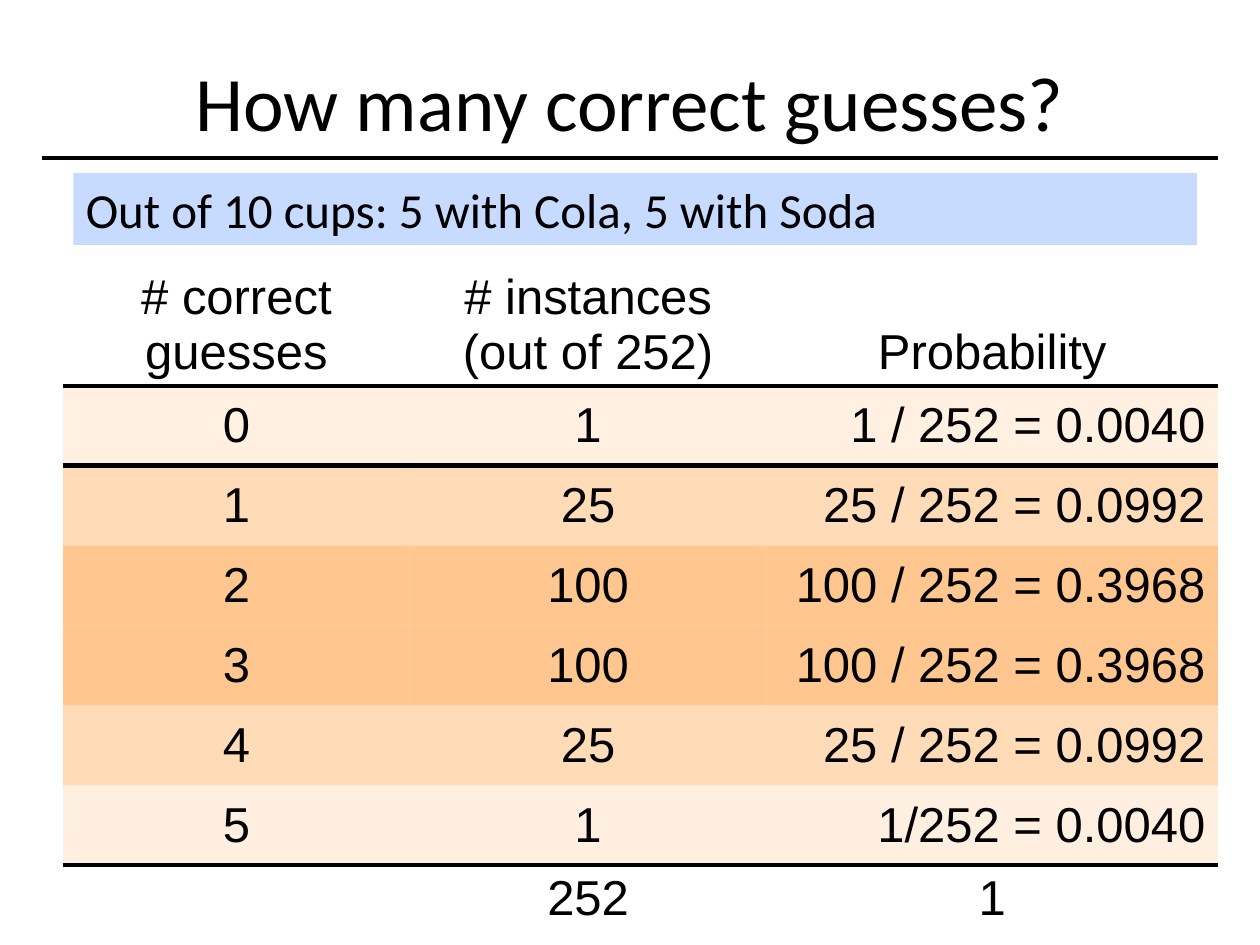
from pptx import Presentation
from pptx.dml.color import RGBColor
from pptx.enum.shapes import MSO_CONNECTOR, MSO_SHAPE
from pptx.enum.text import MSO_ANCHOR, PP_ALIGN
from pptx.oxml.ns import qn
from pptx.util import Cm, Pt
from lxml import etree

STRAIGHT = MSO_CONNECTOR.STRAIGHT
RECTANGLE = MSO_SHAPE.RECTANGLE
LEFT, CENTER, RIGHT = PP_ALIGN.LEFT, PP_ALIGN.CENTER, PP_ALIGN.RIGHT
MIDDLE, BOTTOM = MSO_ANCHOR.MIDDLE, MSO_ANCHOR.BOTTOM
TITLE_ONLY = 5

BLACK, BLUE, ORANGE = "000000", "6699FF", "FF9933"
PLAIN_TABLE_STYLE = "{2D5ABB26-0587-4C30-8999-92F81FD0307C}"

HEADER = ["# correct guesses", "# instances (out of 252)", "Probability"]
# Each row: cell texts and the opacity of its orange fill in percent
BODY = [
    (["0", "1", "1 / 252 = 0.0040"], 14),
    (["1", "25", "25 / 252 = 0.0992"], 35),
    (["2", "100", "100 / 252 = 0.3968"], 55),
    (["3", "100", "100 / 252 = 0.3968"], 55),
    (["4", "25", "25 / 252 = 0.0992"], 35),
    (["5", "1", "1/252 = 0.0040"], 15),
]
TOTALS = ["", "252", "1"]
COLUMN_WIDTHS = [6.99, 7.19, 9.1]
HEADER_HEIGHT, ROW_HEIGHT = 2.5, 1.61


def rgb(color):
    return RGBColor.from_string(color)


def set_fill(fill, color, opacity):
    fill.solid()
    fill.fore_color.rgb = rgb(color)
    # python-pptx has no transparency setting
    color_element = fill._xPr.find(qn("a:solidFill"))[0]
    etree.SubElement(color_element, qn("a:alpha"), val=str(opacity * 1000))


def format_text(text_frame, font_name, size, alignment):
    for paragraph in text_frame.paragraphs:
        paragraph.alignment = alignment
        for run in paragraph.runs:
            run.font.name = font_name
            run.font.size = Pt(size)
            run.font.color.rgb = rgb(BLACK)


def add_border(cell, side, width):
    """Side is the border's tag: lnT or lnB; borders precede the fill."""
    line = etree.Element(qn(f"a:{side}"), w=str(Pt(width)))
    fill = etree.SubElement(line, qn("a:solidFill"))
    etree.SubElement(fill, qn("a:srgbClr"), val=BLACK)
    cell._tc.get_or_add_tcPr().insert(0, line)


def add_title(slide, left, top, width, height):
    title = slide.shapes.title
    title.left, title.top = Cm(left), Cm(top)
    title.width, title.height = Cm(width), Cm(height)
    title.text_frame.text = "How many correct guesses?"
    title.text_frame.vertical_anchor = MIDDLE
    format_text(title.text_frame, "Calibri", 44, CENTER)


def add_rule(slide, left, top, width):
    rule = slide.shapes.add_connector(
        STRAIGHT, Cm(left), Cm(top), Cm(left + width), Cm(top))
    rule.line.color.rgb = rgb(BLACK)
    rule.line.width = Pt(2)
    etree.SubElement(rule._element.spPr, qn("a:effectLst"))


def add_banner(slide, left, top, width, height):
    banner = slide.shapes.add_shape(
        RECTANGLE, Cm(left), Cm(top), Cm(width), Cm(height))
    banner.shadow.inherit = False
    banner.line.fill.background()
    set_fill(banner.fill, BLUE, 36)
    banner.text_frame.word_wrap = True
    banner.text_frame.text = "Out of 10 cups: 5 with Cola, 5 with Soda"
    format_text(banner.text_frame, "Calibri", 28, LEFT)


def add_probability_table(slide, left, top):
    rows = [HEADER] + [texts for texts, _ in BODY] + [TOTALS]
    last_body_row = len(BODY)
    height = HEADER_HEIGHT + ROW_HEIGHT * (len(rows) - 1)
    table = slide.shapes.add_table(
        len(rows), len(HEADER), Cm(left), Cm(top),
        Cm(sum(COLUMN_WIDTHS)), Cm(height)).table
    table.first_row = table.horz_banding = False
    table._tbl.tblPr.find(qn("a:tableStyleId")).text = PLAIN_TABLE_STYLE

    for column, width in zip(table.columns, COLUMN_WIDTHS):
        column.width = Cm(width)

    for row_index, texts in enumerate(rows):
        is_body = 1 <= row_index <= last_body_row
        table.rows[row_index].height = Cm(ROW_HEIGHT if row_index else HEADER_HEIGHT)
        for column_index, text in enumerate(texts):
            cell = table.cell(row_index, column_index)
            cell.text_frame.text = text
            is_right = is_body and column_index == 2
            format_text(cell.text_frame, "Arial", 28, RIGHT if is_right else CENTER)

            # Orange bands, strongest in the middle
            if is_body:
                cell.vertical_anchor = MIDDLE
                set_fill(cell.fill, ORANGE, BODY[row_index - 1][1])
            else:
                cell.fill.background()
                if row_index == 0:
                    cell.vertical_anchor = BOTTOM

            # Rules below the header and above the totals
            if row_index in (0, last_body_row):
                add_border(cell, "lnB", 3)
            if row_index in (1, last_body_row + 1):
                add_border(cell, "lnT", 3)


def main():
    presentation = Presentation()
    presentation.slide_width, presentation.slide_height = Cm(25.4), Cm(19.05)
    slide = presentation.slides.add_slide(presentation.slide_layouts[TITLE_ONLY])
    add_title(slide, 1.27, 0.43, 22.86, 3.18)
    add_probability_table(slide, 1.27, 5.28)
    add_banner(slide, 1.48, 3.49, 22.65, 1.45)
    add_rule(slide, 0.85, 3.18, 23.7)
    presentation.save("out.pptx")


if __name__ == "__main__":
    main()
